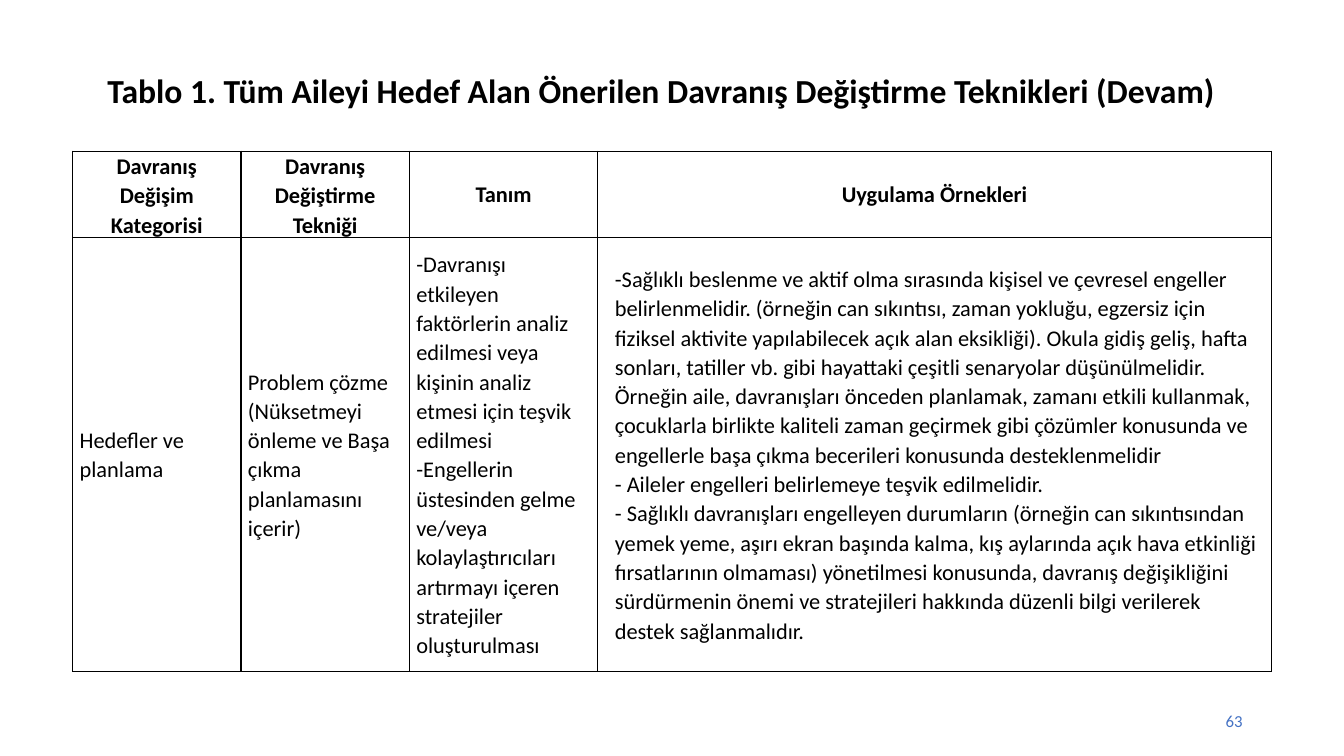
import pptx
import pptx.util
import pptx.dml.color
import pptx.enum.text
import pptx.oxml
import pptx.oxml.ns

SLIDE_WIDTH, SLIDE_HEIGHT = 13.33, 7.5
COLORS = {"text": "000000", "border": "000000", "number": "4472C4"}
ALIGN = pptx.enum.text.PP_ALIGN
MIDDLE = pptx.enum.text.MSO_ANCHOR.MIDDLE

# Table grid in inches
TABLE_LEFT, TABLE_TOP = 0.72, 1.5
COLUMN_WIDTHS = [1.67, 1.67, 1.87, 6.68]
ROW_HEIGHTS = [0.81, 4.31]
CELL_MARGINS = {"margin_left": 0.07, "margin_right": 0.07,
                "margin_top": 0, "margin_bottom": 0}
EXAMPLES_INDENT = 0.1

# Text formats
TITLE_FONT = {"name": "Calibri", "size": pptx.util.Pt(24), "bold": True}
HEADER_FONT = {"name": "Calibri", "size": pptx.util.Pt(16), "bold": True}
BODY_FONT = {**HEADER_FONT, "bold": False}
NUMBER_FONT = {"name": "Calibri", "size": pptx.util.Pt(12)}
TITLE_PARAGRAPH = {"alignment": ALIGN.CENTER, "line_spacing": 0.9}
HEADER_PARAGRAPH = {"alignment": ALIGN.CENTER, "line_spacing": 1.07}
BODY_PARAGRAPH = {"alignment": ALIGN.LEFT, "line_spacing": 1.07}
NUMBER_PARAGRAPH = {"alignment": ALIGN.RIGHT}

# Wording
TITLE = "Tablo 1. Tüm Aileyi Hedef Alan Önerilen Davranış Değiştirme Teknikleri (Devam)"
HEADERS = ["Davranış Değişim Kategorisi", "Davranış Değiştirme Tekniği",
           "Tanım", "Uygulama Örnekleri"]
BODY = [
    ["Hedefler ve planlama"],
    ["Problem çözme",
     "(Nüksetmeyi önleme ve Başa çıkma planlamasını içerir)"],
    ["-Davranışı etkileyen faktörlerin analiz edilmesi veya kişinin analiz "
     "etmesi için teşvik edilmesi",
     "-Engellerin üstesinden gelme ve/veya kolaylaştırıcıları artırmayı içeren "
     "stratejiler oluşturulması"],
    ["-Sağlıklı beslenme ve aktif olma sırasında kişisel ve çevresel engeller "
     "belirlenmelidir. (örneğin can sıkıntısı, zaman yokluğu, egzersiz için "
     "fiziksel aktivite yapılabilecek açık alan eksikliği). Okula gidiş geliş, "
     "hafta sonları, tatiller vb. gibi hayattaki çeşitli senaryolar "
     "düşünülmelidir. Örneğin aile, davranışları önceden planlamak, zamanı "
     "etkili kullanmak, çocuklarla birlikte kaliteli zaman geçirmek gibi "
     "çözümler konusunda ve engellerle başa çıkma becerileri konusunda "
     "desteklenmelidir",
     "- Aileler engelleri belirlemeye teşvik edilmelidir.",
     "- Sağlıklı davranışları engelleyen durumların (örneğin can sıkıntısından "
     "yemek yeme, aşırı ekran başında kalma, kış aylarında açık hava etkinliği "
     "fırsatlarının olmaması) yönetilmesi konusunda, davranış değişikliğini "
     "sürdürmenin önemi ve stratejileri hakkında düzenli bilgi verilerek "
     "destek sağlanmalıdır."],
]


def apply_format(target, values):
    for name, value in values.items():
        setattr(target, name, value)


def write_paragraphs(text_frame, texts, font, layout, color, indent=0):
    for index, text in enumerate(texts):
        paragraph = text_frame.add_paragraph() if index else text_frame.paragraphs[0]
        apply_format(paragraph, layout)
        if indent:
            paragraph._p.get_or_add_pPr().set("marL", str(pptx.util.Inches(indent)))
        run = paragraph.add_run()
        run.text = text
        apply_format(run.font, font)
        run.font.color.rgb = pptx.dml.color.RGBColor.from_string(COLORS[color])


def add_label(slide, box, text, font, layout, color):
    """Place a text box given in shares of the slide's size."""
    left, top, width, height = box
    shape = slide.shapes.add_textbox(
        pptx.util.Inches(left * SLIDE_WIDTH), pptx.util.Inches(top * SLIDE_HEIGHT),
        pptx.util.Inches(width * SLIDE_WIDTH), pptx.util.Inches(height * SLIDE_HEIGHT))
    apply_format(shape.text_frame, {"word_wrap": True, "vertical_anchor": MIDDLE})
    write_paragraphs(shape.text_frame, [text], font, layout, color)


def add_borders(cell):
    properties = cell._tc.get_or_add_tcPr()
    for side in ("lnL", "lnR", "lnT", "lnB"):
        properties.append(pptx.oxml.parse_xml(
            f'<a:{side} {pptx.oxml.ns.nsdecls("a")} w="{pptx.util.Pt(1)}">'
            f'<a:solidFill><a:srgbClr val="{COLORS["border"]}"/></a:solidFill>'
            f'</a:{side}>'))


def fill_cell(cell, texts, font, layout, indent=0):
    apply_format(cell, {name: pptx.util.Inches(value)
                        for name, value in CELL_MARGINS.items()})
    cell.vertical_anchor = MIDDLE
    add_borders(cell)
    cell.fill.background()
    write_paragraphs(cell.text_frame, texts, font, layout, "text", indent)


def add_techniques_table(slide):
    table = slide.shapes.add_table(
        len(ROW_HEIGHTS), len(COLUMN_WIDTHS),
        pptx.util.Inches(TABLE_LEFT), pptx.util.Inches(TABLE_TOP),
        pptx.util.Inches(sum(COLUMN_WIDTHS)), pptx.util.Inches(sum(ROW_HEIGHTS))).table
    apply_format(table, {"first_row": False, "horz_banding": False})
    for column, width in zip(table.columns, COLUMN_WIDTHS):
        column.width = pptx.util.Inches(width)
    for row, height in zip(table.rows, ROW_HEIGHTS):
        row.height = pptx.util.Inches(height)
    last = len(COLUMN_WIDTHS) - 1
    for index, (header, texts) in enumerate(zip(HEADERS, BODY)):
        fill_cell(table.cell(0, index), [header], HEADER_FONT, HEADER_PARAGRAPH)
        fill_cell(table.cell(1, index), texts, BODY_FONT, BODY_PARAGRAPH,
                  EXAMPLES_INDENT if index == last else 0)


def main():
    presentation = pptx.Presentation()
    presentation.slide_width = pptx.util.Inches(SLIDE_WIDTH)
    presentation.slide_height = pptx.util.Inches(SLIDE_HEIGHT)
    slide = presentation.slides.add_slide(presentation.slide_layouts[6])

    # Title, table and page number
    add_label(slide, (0.046, 0.064, 0.892, 0.116), TITLE,
              TITLE_FONT, TITLE_PARAGRAPH, "text")
    add_techniques_table(slide)
    add_label(slide, (0.707, 0.927, 0.225, 0.053), "63",
              NUMBER_FONT, NUMBER_PARAGRAPH, "number")

    presentation.save("out.pptx")


if __name__ == "__main__":
    main()
